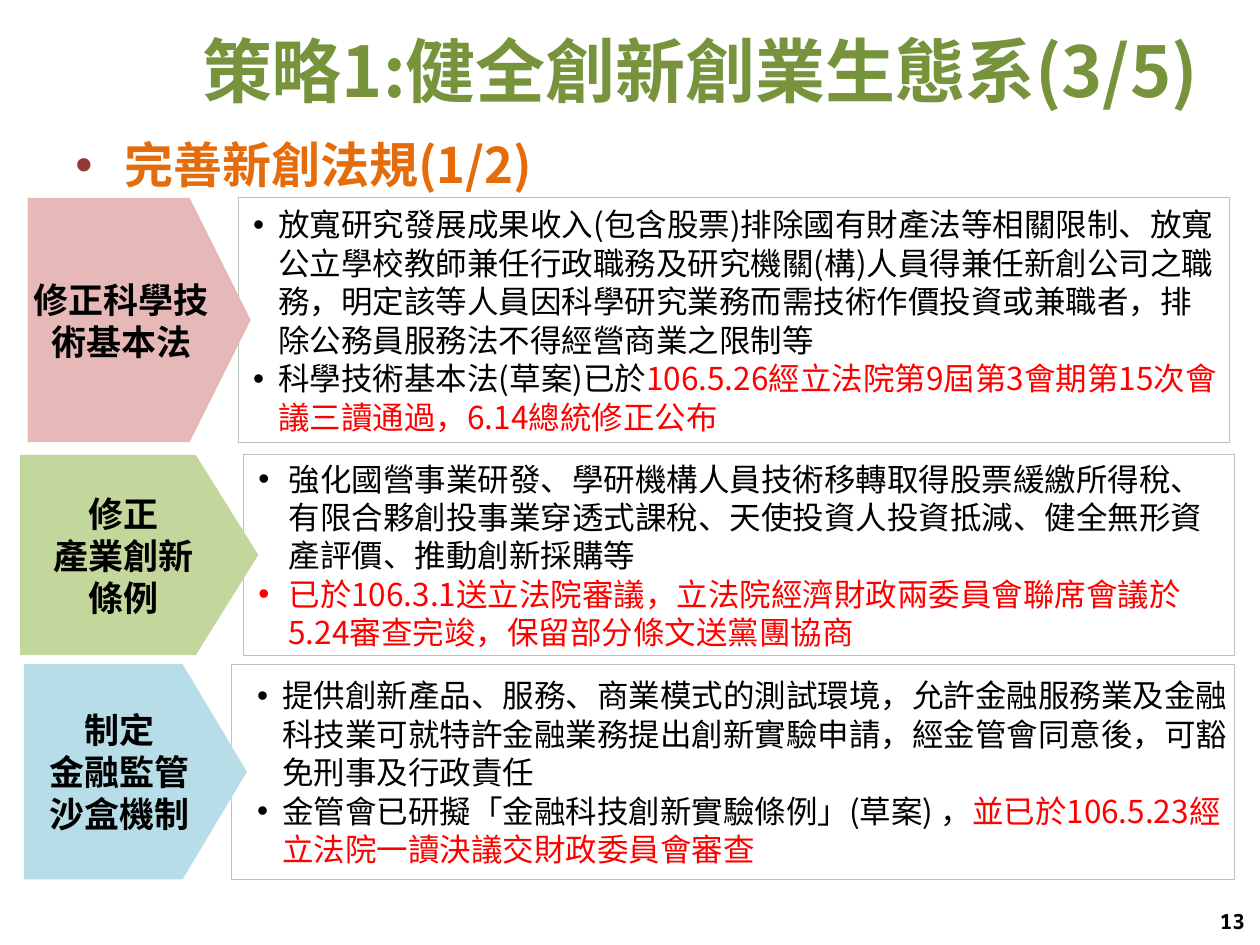
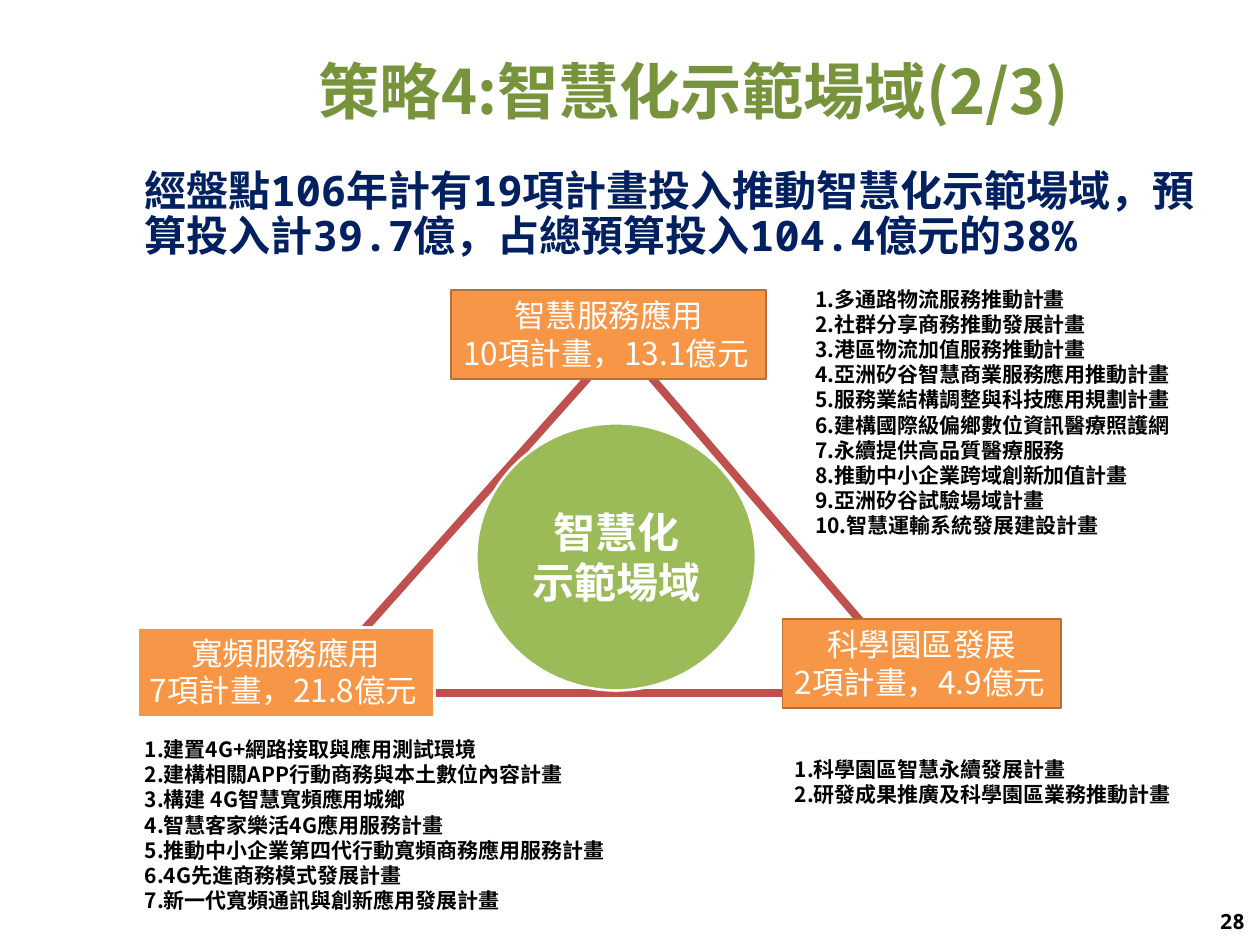
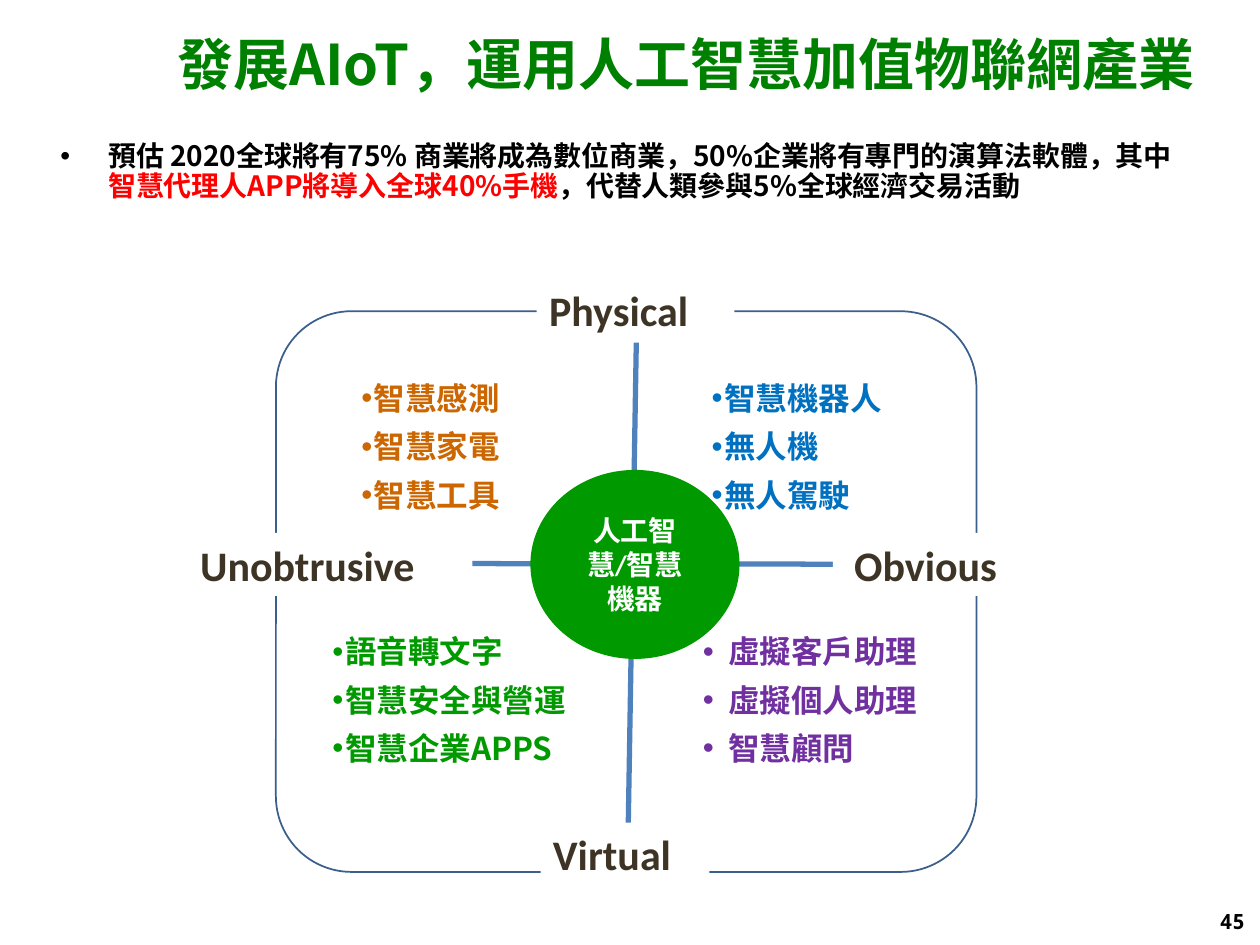
"""Builds three slides on start-up law, smart sites and AIoT."""
import pptx
import pptx.dml.color
import pptx.enum.shapes
import pptx.enum.text
import pptx.oxml.ns
import pptx.util
from lxml import etree

Inches = pptx.util.Inches
Pt = pptx.util.Pt
Kind = pptx.enum.shapes.MSO_SHAPE
Align = pptx.enum.text.PP_ALIGN
Anchor = pptx.enum.text.MSO_ANCHOR
qn = pptx.oxml.ns.qn

SANS, MONO, LATIN = "Noto Sans CJK SC", "Noto Sans Mono", "Calibri"
BLACK, WHITE, RED = "000000", "FFFFFF", "FF0000"
OLIVE, GREEN, ORANGE, BROWN = "77933C", "009900", "F79646", "3D3425"
PADS = (0.1, 0.05, 0.1, 0.05)


def rgb(code):
    """Turn a hex string into a colour."""
    return pptx.dml.color.RGBColor.from_string(code)


def bullet(para, left, hang, mark, tint):
    """Set the indent of a paragraph and its bullet, if any."""
    props = para._p.get_or_add_pPr()
    props.set("marL", str(Inches(left)))
    props.set("indent", str(Inches(hang)))
    if mark:
        if tint:
            paint = etree.SubElement(props, qn("a:buClr"))
            etree.SubElement(paint, qn("a:srgbClr")).set("val", tint)
        etree.SubElement(props, qn("a:buFont")).set("typeface", "Arial")
        etree.SubElement(props, qn("a:buChar")).set("char", "•")


def say(shape, lines, size, color=BLACK, font=SANS, bold=False, align=Align.LEFT,
        anchor=Anchor.MIDDLE, pads=PADS, indent=None, mark=True, tint=None,
        lead=None, gap=0, wrap=True):
    """Write paragraphs, each a string or a list of (text, colour) runs."""
    frame = shape.text_frame
    frame.word_wrap = wrap
    frame.vertical_anchor = anchor
    (frame.margin_left, frame.margin_top,
     frame.margin_right, frame.margin_bottom) = map(Inches, pads)
    for i, line in enumerate(lines):
        para = frame.paragraphs[0] if i == 0 else frame.add_paragraph()
        para.alignment = align
        if lead:
            para.line_spacing = lead
        if gap and i:
            para.space_before = Pt(gap)
        if indent:
            bullet(para, *indent, mark, tint)
        para.font.size = Pt(size)
        para.font.bold = bold
        para.font.color.rgb = rgb(color)
        para.font.name = font
        props = para._p.pPr.find(qn("a:defRPr"))
        etree.SubElement(props, qn("a:ea")).set("typeface", SANS)
        for text, shade in [(line, None)] if isinstance(line, str) else line:
            run = para.add_run()
            run.text = text
            if shade:
                run.font.color.rgb = rgb(shade)


def note(slide, box, lines, size, **style):
    """Add a text box."""
    say(slide.shapes.add_textbox(*map(Inches, box)), lines, size, **style)


def form(slide, kind, box, fill=None, line=None, width=1, adj=None):
    """Add a preset shape without shadow."""
    shape = slide.shapes.add_shape(kind, *map(Inches, box))
    shape.shadow.inherit = False
    if adj is not None:
        shape.adjustments[0] = adj
    if fill:
        shape.fill.solid()
        shape.fill.fore_color.rgb = rgb(fill)
    else:
        shape.fill.background()
    if line:
        shape.line.color.rgb = rgb(line)
        shape.line.width = Pt(width)
    else:
        shape.line.fill.background()
    return shape


def axis(slide, start, end):
    """Draw a thick blue line."""
    line = slide.shapes.add_connector(
        pptx.enum.shapes.MSO_CONNECTOR.STRAIGHT, *map(Inches, start + end))
    line.line.color.rgb = rgb("4F81BD")
    line.line.width = Pt(3)
    etree.SubElement(line._element.spPr, qn("a:effectLst"))


def page(deck, title, box, size, number, color=OLIVE, **style):
    """Start a slide with its title and page number."""
    slide = deck.slides.add_slide(deck.slide_layouts[6])
    note(slide, box, [title], size, color=color, bold=True, align=Align.CENTER, **style)
    note(slide, (7.65, 7.11, 2.33, 0.4), [number], 12, font=MONO, bold=True,
         align=Align.RIGHT)
    return slide


def row(slide, box, inset, wide, fill, adj, tag, tagpads, lines, pads, hang):
    """Place a bulleted panel and the pointed tag that leads into it."""
    left, top, width, height = box
    panel = form(slide, Kind.RECTANGLE, (left + inset, top, width - inset, height),
                 WHITE, "BFBFBF", 0.5)
    say(panel, lines, 18, pads=pads, indent=(hang, -hang), lead=Pt(22))
    arrow = form(slide, Kind.PENTAGON, (left, top, wide, height), fill, adj=adj)
    say(arrow, tag, 20, bold=True, align=Align.CENTER, pads=tagpads)


def laws(deck):
    """Build the slide on start-up law."""
    slide = page(deck, "策略1:健全創新創業生態系(3/5)", (0.86, -0.19, 9, 1.49), 40, "13",
                 indent=(0.39, 0), mark=False)
    note(slide, (0.5, 1.02, 8.43, 0.57), ["完善新創法規(1/2)"], 28, color="E46C0A",
         bold=True, indent=(0.39, -0.39), tint="953735")
    even = (0.12, 0.08, 0.12, 0.08)
    row(slide, (0.16, 3.61, 9.64, 1.59), 1.77, 1.89, "C3D69B", 0.312,
        ["修正", "產業創新", "條例"], even,
        ["強化國營事業研發、學研機構人員技術移轉取得股票緩繳所得稅、有限合夥創投事業穿透式課稅、"
         "天使投資人投資抵減、健全無形資產評價、推動創新採購等",
         [("已於106.3.1送立法院審議，立法院經濟財政兩委員會聯席會議於5.24審查完竣，"
           "保留部分條文送黨團協商", RED)]],
        (0.12, 0.08, 0.08, 0.08), 0.24)
    row(slide, (0.19, 5.27, 9.61, 1.71), 1.65, 1.77, "B7DEE8", 0.299,
        ["制定", "金融監管沙盒機制"], even,
        ["提供創新產品、服務、商業模式的測試環境，允許金融服務業及金融科技業可就特許金融業務"
         "提出創新實驗申請，經金管會同意後，可豁免刑事及行政責任",
         [("金管會已研擬「金融科技創新實驗條例」(草案) ，", None),
          ("並已於106.5.23經立法院一讀決議交財政委員會審查", RED)]],
        (0.2, 0.05, 0.05, 0.05), 0.2)
    row(slide, (0.22, 1.57, 9.54, 1.94), 1.67, 1.77, "E6B9B8", 0.274,
        ["修正科學技術基本法"], (0.04, 0.08, 0.08, 0.08),
        ["放寬研究發展成果收入(包含股票)排除國有財產法等相關限制、放寬公立學校教師兼任行政職務及"
         "研究機關(構)人員得兼任新創公司之職務，明定該等人員因科學研究業務而需技術作價投資或"
         "兼職者，排除公務員服務法不得經營商業之限制等",
         [("科學技術基本法(草案)已於", None),
          ("106.5.26經立法院第9屆第3會期第15次會議三讀通過，6.14總統修正公布", RED)]],
        (0.12, 0.05, 0.08, 0.05), 0.2)


def field(slide, box, edge, width, head, total, area, plans):
    """Place a field's orange box and the numbered list of its plans."""
    say(form(slide, Kind.RECTANGLE, box, ORANGE, edge, width), [], 18)
    shape = slide.shapes[-1]
    say(shape, [head], 18, color=WHITE, align=Align.CENTER, anchor=Anchor.TOP, wrap=False)
    para = shape.text_frame.add_paragraph()
    para.text = total
    para.alignment = Align.LEFT
    para.font.size = Pt(18)
    para.font.name = SANS
    para.font.color.rgb = rgb(WHITE)
    note(slide, area, plans, 12, bold=True)


def sites(deck):
    """Build the slide on smart sites."""
    slide = page(deck, "策略4:智慧化示範場域(2/3)", (0.62, 0.11, 9.38, 1.21), 35, "28",
                 indent=(0.39, 0), mark=False)
    form(slide, Kind.ISOSCELES_TRIANGLE, (2.44, 2.71, 4.88, 2.79), WHITE, "C0504D", 4.5, 0.509)
    note(slide, (1.05, 1.3, 8.56, 0.97),
         ["經盤點106年計有19項計畫投入推動智慧化示範場域，預算投入計39.7億，"
          "占總預算投入104.4億元的38%"],
         24, color="002060", font=MONO, bold=True, anchor=Anchor.TOP, lead=0.9)
    core = form(slide, Kind.FLOWCHART_CONNECTOR, (3.78, 3.36, 2.22, 2.12), "9BBB59", WHITE, 1.5)
    say(core, ["智慧化", "示範場域"], 24, color=WHITE, bold=True, align=Align.CENTER)
    field(slide, (1.09, 4.98, 2.36, 0.71), WHITE, 1.5, "寬頻服務應用", "7項計畫，21.8億元",
          (1.05, 5.74, 3.92, 1.61),
          ["1.建置4G+網路接取與應用測試環境",
           "2.建構相關APP行動商務與本土數位內容計畫",
           "3.構建 4G智慧寬頻應用城鄉",
           "4.智慧客家樂活4G應用服務計畫",
           "5.推動中小企業第四代行動寬頻商務應用服務計畫",
           "6.4G先進商務模式發展計畫",
           "7.新一代寬頻通訊與創新應用發展計畫"])
    field(slide, (6.21, 4.91, 2.21, 0.71), "B76F34", 1, "科學園區發展", "2項計畫，4.9億元",
          (6.21, 5.74, 3.53, 0.92),
          ["1.科學園區智慧永續發展計畫",
           "2.研發成果推廣及科學園區業務推動計畫"])
    field(slide, (3.58, 2.3, 2.5, 0.71), "B76F34", 1, "智慧服務應用", "10項計畫，13.1億元",
          (6.37, 2.26, 3.12, 2.02),
          ["1.多通路物流服務推動計畫",
           "2.社群分享商務推動發展計畫",
           "3.港區物流加值服務推動計畫",
           "4.亞洲矽谷智慧商業服務應用推動計畫",
           "5.服務業結構調整與科技應用規劃計畫",
           "6.建構國際級偏鄉數位資訊醫療照護網",
           "7.永續提供高品質醫療服務",
           "8.推動中小企業跨域創新加值計畫",
           "9.亞洲矽谷試驗場域計畫",
           "10.智慧運輸系統發展建設計畫"])


def chart(slide, left, top):
    """Place the four-way map with its axes, lists, labels and core."""
    form(slide, Kind.ROUNDED_RECTANGLE, (left, top, 5.56, 4.45), line="3A5F8C", adj=0.135)
    axis(slide, (left - 0.39, top + 2), (left + 5.85, top + 2.01))
    axis(slide, (left + 2.86, top + 0.25), (left + 2.79, top + 4.45))
    lists = [
        (0.58, 0.49, 1.73, "CC6600", 0.1, ["智慧感測", "智慧家電", "智慧工具"]),
        (3.36, 0.49, 1.97, "0070C0", 0.1, ["智慧機器人", "無人機", "無人駕駛"]),
        (0.35, 2.5, 2.19, GREEN, 0.1, ["語音轉文字", "智慧安全與營運", "智慧企業APPS"]),
        (3.29, 2.5, 2.11, "7030A0", 0.2, ["虛擬客戶助理", "虛擬個人助理", "智慧顧問"]),
    ]
    for x, y, width, color, hang, lines in lists:
        note(slide, (left + x, top + y, width, 1.18), lines, 18, color=color, bold=True,
             anchor=Anchor.TOP, indent=(hang, -hang), gap=6)
    ends = [
        (4.42, 1.76, 1.73, 0.17, "Obvious"),
        (2.07, -0.26, 1.57, 0.1, "Physical"),
        (2.1, 4.06, 1.34, 0.1, "Virtual"),
        (-0.7, 1.76, 2.26, 0.1, "Unobtrusive"),
    ]
    for x, y, width, pad, word in ends:
        plate = form(slide, Kind.RECTANGLE, (left + x, top + y, width, 0.5), WHITE)
        say(plate, [word], 24, color=BROWN, font=LATIN, bold=True, anchor=Anchor.TOP,
            pads=(pad, 0.05, 0.1, 0.05))
    core = form(slide, Kind.OVAL, (left + 2.02, top + 1.26, 1.66, 1.5), GREEN)
    say(core, ["人工智慧/智慧機器"], 16, color=WHITE, font=LATIN, bold=True, align=Align.CENTER)


def aiot(deck):
    """Build the slide on AIoT."""
    slide = page(deck, "發展AIoT，運用人工智慧加值物聯網產業", (1.23, 0.23, 8.43, 0.61), 32,
                 "45", color="008000", lead=0.9)
    note(slide, (0.38, 1.08, 9.19, 0.59),
         [[("預估 2020全球將有75% 商業將成為數位商業，50%企業將有專門的演算法軟體，其中", None),
           ("智慧代理人APP將導入全球40%手機", RED),
           ("，代替人類參與5%全球經濟交易活動", None)]],
         16, bold=True, anchor=Anchor.TOP, indent=(0.38, -0.38), lead=0.9)
    chart(slide, 2.19, 2.47)


def main():
    """Build and save the deck."""
    deck = pptx.Presentation()
    deck.slide_width, deck.slide_height = Inches(10), Inches(7.5)
    laws(deck)
    sites(deck)
    aiot(deck)
    deck.save("out.pptx")


if __name__ == "__main__":
    main()
